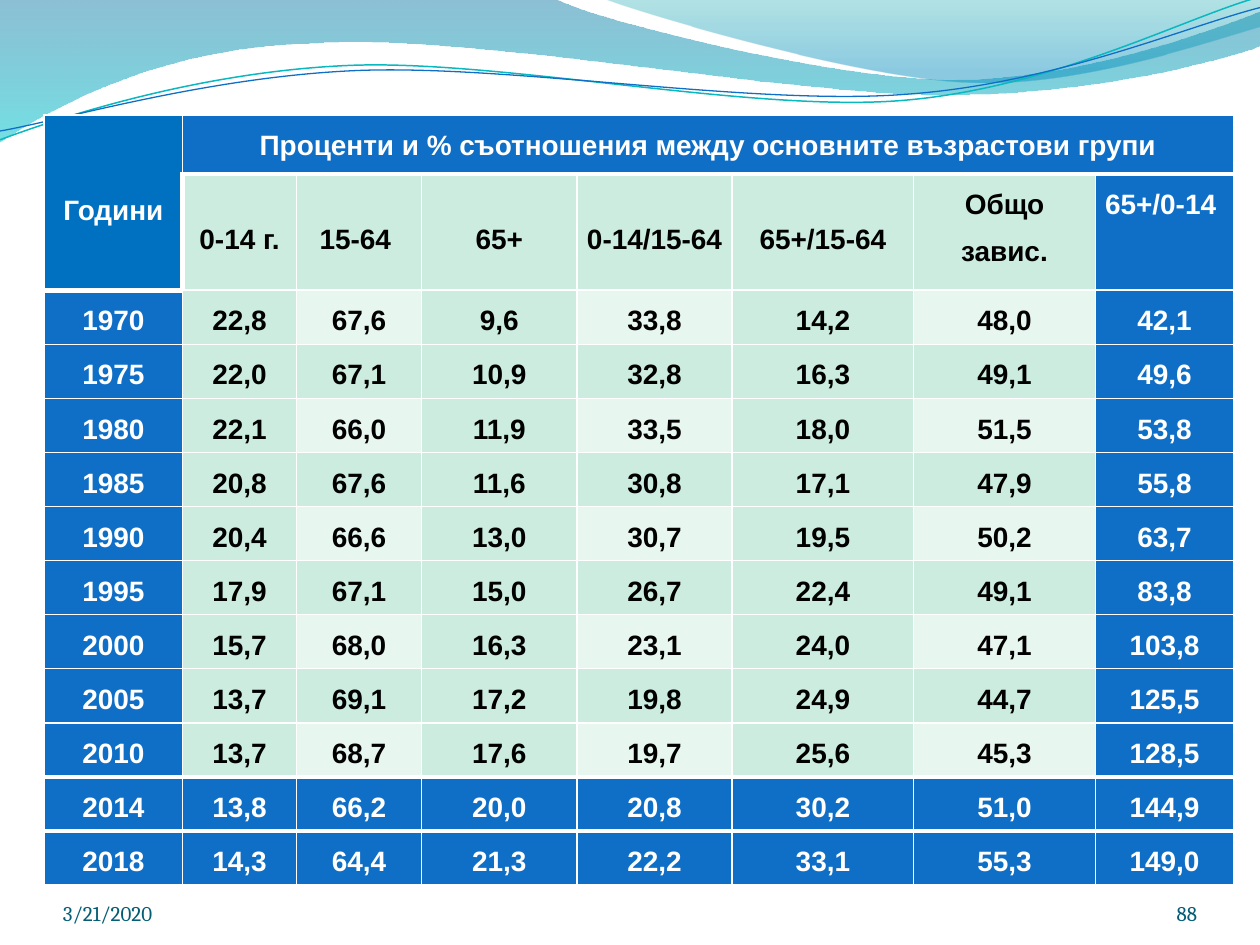
"""Build a slide with a table of age group percentages under a wave banner."""
from math import cos, radians, sin

from lxml import etree
from pptx import Presentation
from pptx.dml.color import RGBColor
from pptx.enum.text import MSO_ANCHOR, PP_ALIGN
from pptx.oxml.ns import qn
from pptx.util import Cm, Pt

TOP, MIDDLE, BOTTOM = MSO_ANCHOR.TOP, MSO_ANCHOR.MIDDLE, MSO_ANCHOR.BOTTOM
LEFT, CENTER, RIGHT = PP_ALIGN.LEFT, PP_ALIGN.CENTER, PP_ALIGN.RIGHT
INCH = 2.54

COLORS = {
    "white": "FFFFFF", "black": "000000", "blue": "0F6FC6", "corner": "0070C0",
    "band": "CBECDE", "light": "E7F6EF", "footer": "045D75", "teal": "0AB8BF",
    "deep": "0074A1", "aqua": "00C6CF", "sea": "00A1A9", "sky": "008BBF",
}

TITLE = "Проценти и % съотношения между основните възрастови групи"
CORNER = "Години"
HEADERS = ["0-14 г.", "15-64 ", "65+", "0-14/15-64", "65+/15-64", "Общо завис.", "65+/0-14 "]
YEARS = [
    ("1970", "22,8", "67,6", "9,6", "33,8", "14,2", "48,0", "42,1"),
    ("1975", "22,0", "67,1", "10,9", "32,8", "16,3", "49,1", "49,6"),
    ("1980", "22,1", "66,0", "11,9", "33,5", "18,0", "51,5", "53,8"),
    ("1985", "20,8", "67,6", "11,6", "30,8", "17,1", "47,9", "55,8"),
    ("1990", "20,4", "66,6", "13,0", "30,7", "19,5", "50,2", "63,7"),
    ("1995", "17,9", "67,1", "15,0", "26,7", "22,4", "49,1", "83,8"),
    ("2000", "15,7", "68,0", "16,3", "23,1", "24,0", "47,1", "103,8"),
    ("2005", "13,7", "69,1", "17,2", "19,8", "24,9", "44,7", "125,5"),
    ("2010", "13,7", "68,7", "17,6", "19,7", "25,6", "45,3", "128,5"),
    ("2014", "13,8", "66,2", "20,0", "20,8", "30,2", "51,0", "144,9"),
    ("2018", "14,3", "64,4", "21,3", "22,2", "33,1", "55,3", "149,0"),
]
ROWS = [[CORNER, TITLE] + [""] * 6, [""] + HEADERS] + YEARS
TABLE_LEFT, TABLE_TOP = 0.89, 2.32
COLUMN_WIDTHS = [2.79, 2.3, 2.52, 3.13, 3.13, 3.66, 3.66, 2.79]
ROW_HEIGHTS = [1.19, 2.34] + [1.09] * len(YEARS)
LAST_COLUMN = len(COLUMN_WIDTHS) - 1
TOTAL_ROWS = (11, 12)

WAVES = [
    {"box": (-0.01, -0.01, 10.02, 1.14), "stops": [("deep", 45, 0), ("aqua", 55, 1)],
     "start": (0, 0), "segments": [
        [(4.4, -0.01)],
        [(4.76, 0.17), (6.64, 0.63), (7.58, 0.63)],
        [(8.53, 0.63), (9.58, 0.26), (10, 0.09)],
        [(10.01, 0.36)],
        [(9.83, 0.44), (8.7, 0.76), (7.46, 0.75)],
        [(6.22, 0.75), (3.82, 0.28), (2.57, 0.34)],
        [(1.29, 0.36), (0.46, 0.83), (-0.01, 1.13)],
        [(0, 0)]]},
    {"box": (4.79, -0.01, 5.21, 0.7), "stops": [("sea", 30, 0), ("sky", 45, 0.8)],
     "start": (4.79, -0.01), "segments": [
        [(5.09, 0.11), (6.82, 0.62), (7.69, 0.65)],
        [(8.56, 0.69), (9.61, 0.32), (10, 0.21)],
        [(10, 0)],
        [(4.79, -0.01)]]},
]
STROKES = [
    {"box": (-0.02, 0.22, 10.02, 0.71), "color": "teal", "width": 0.85,
     "start": (0, 1.11), "segments": [
        [(0.48, 0.93), (1.58, 0.57), (2.77, 0.52)],
        [(3.95, 0.47), (5.93, 0.89), (7.13, 0.8)],
        [(8.33, 0.71), (9.38, 0.15), (9.98, -0.02)]]},
    {"box": (-0.02, 0.3, 10.03, 0.58), "color": "blue", "width": 0.75,
     "start": (0, 1.04), "segments": [
        [(0.47, 0.96), (1.64, 0.61), (2.83, 0.56)],
        [(4.03, 0.51), (5.97, 0.84), (7.17, 0.75)],
        [(8.36, 0.67), (9.41, 0.21), (10, 0.06)]]},
]
STROKE_ROTATION = 357.3
FOOTERS = [("3/21/2020", 0.5, 2.33, LEFT), ("88", 8.67, 0.83, RIGHT)]


def length(inches):
    return Cm(inches * INCH)


def color(name):
    return RGBColor.from_string(COLORS[name])


def apply(target, formats):
    for name, value in formats.items():
        setattr(target, name, value)


def write(frame, text, alignment, spacing, font_name, size, bold, color_name):
    paragraph = frame.paragraphs[0]
    apply(paragraph, {"alignment": alignment, "line_spacing": spacing})
    run = paragraph.add_run()
    run.text = text
    apply(run.font, {"name": font_name, "size": Pt(size), "bold": bold})
    run.font.color.rgb = color(color_name)


def local_point(point, box, rotation):
    left, top, width, height = box
    angle = radians(-rotation)
    x, y = point[0] - left - width / 2, point[1] - top - height / 2
    return (length(width / 2 + x * cos(angle) - y * sin(angle)),
            length(height / 2 + x * sin(angle) + y * cos(angle)))


def add_outline(slide, outline, closed, rotation=0):
    box = outline["box"]
    left, top, width, height = map(length, box)
    builder = slide.shapes.build_freeform(0, 0)
    builder.add_line_segments([(width, height)], close=closed)
    shape = builder.convert_to_shape()
    shape.shadow.inherit = False
    apply(shape, {"left": left, "top": top, "width": width, "height": height,
                  "rotation": rotation})
    curve = next(shape._element.spPr.iter(qn("a:path")))
    curve.set("w", str(width))
    curve.set("h", str(height))
    for element in list(curve):
        curve.remove(element)
    commands = [("moveTo", [outline["start"]])]
    commands += [("lnTo" if len(points) == 1 else "cubicBezTo", points)
                 for points in outline["segments"]]
    commands += [("close", [])] if closed else []
    for tag, points in commands:
        command = etree.SubElement(curve, qn(f"a:{tag}"))
        for point in points:
            x, y = local_point(point, box, rotation)
            etree.SubElement(command, qn("a:pt"), x=str(x), y=str(y))
    return shape


def add_wave(slide, wave):
    shape = add_outline(slide, wave, True)
    shape.line.fill.background()
    shape.fill.gradient()
    shape.fill.gradient_angle = 270
    for stop, (name, _, position) in zip(shape.fill.gradient_stops, wave["stops"]):
        stop.color.rgb = color(name)
        stop.position = position
    for element, (_, opacity, _) in zip(shape._element.spPr.iter(qn("a:srgbClr")), wave["stops"]):
        etree.SubElement(element, qn("a:alpha"), val=str(opacity * 1000))


def add_stroke(slide, stroke):
    shape = add_outline(slide, stroke, False, STROKE_ROTATION)
    shape.fill.background()
    shape.line.color.rgb = color(stroke["color"])
    shape.line.width = Pt(stroke["width"])


def fill_name(row, column):
    if (row, column) == (0, 0):
        return "corner"
    if row == 0 or row in TOTAL_ROWS or column in (0, LAST_COLUMN):
        return "blue"
    return "light" if row % 2 == 0 and column % 2 == 0 else "band"


def thick_below(row, column):
    return row in (0, 10, 11) or (row, column) == (1, 0)


def add_borders(cell, row, column):
    thick = {"L": (row, column) == (1, 1), "R": False,
             "T": thick_below(row - 1, column), "B": thick_below(row, column)}
    properties = cell._tc.get_or_add_tcPr()
    for side, is_thick in thick.items():
        line = etree.SubElement(properties, qn(f"a:ln{side}"), w=str(Pt(3 if is_thick else 1)))
        solid = etree.SubElement(line, qn("a:solidFill"))
        etree.SubElement(solid, qn("a:srgbClr"), val=COLORS["white"])


def add_age_table(slide):
    table = slide.shapes.add_table(
        len(ROWS), len(COLUMN_WIDTHS), Cm(TABLE_LEFT), Cm(TABLE_TOP),
        Cm(sum(COLUMN_WIDTHS)), Cm(sum(ROW_HEIGHTS))).table
    apply(table, {"first_row": False, "horz_banding": False})
    for column, width in zip(table.columns, COLUMN_WIDTHS):
        column.width = Cm(width)
    for row, height in zip(table.rows, ROW_HEIGHTS):
        row.height = Cm(height)
    table.cell(0, 0).merge(table.cell(1, 0))
    table.cell(0, 1).merge(table.cell(0, LAST_COLUMN))
    for row, texts in enumerate(ROWS):
        for column, text in enumerate(texts):
            cell = table.cell(row, column)
            if cell.is_spanned:
                continue
            add_borders(cell, row, column)
            fill = fill_name(row, column)
            cell.fill.solid()
            cell.fill.fore_color.rgb = color(fill)
            centered = (row, column) == (0, 0) or (row == 1 and column <= 5)
            apply(cell, {"margin_left": length(0.07), "margin_right": length(0.07),
                         "margin_top": 0, "margin_bottom": 0,
                         "vertical_anchor": MIDDLE if centered else TOP})
            text_color = "white" if fill in ("blue", "corner") else "black"
            write(cell.text_frame, text, CENTER, 1.5, "Arial", 16, True, text_color)


def add_footer(slide, text, left, width, alignment):
    frame = slide.shapes.add_textbox(
        length(left), length(6.95), length(width), length(0.4)).text_frame
    apply(frame, {"word_wrap": True, "vertical_anchor": BOTTOM, "margin_left": 0,
                  "margin_right": 0, "margin_top": 0, "margin_bottom": 0})
    write(frame, text, alignment, 1.0, "Cambria", 12, False, "footer")


presentation = Presentation()
apply(presentation, {"slide_width": length(10), "slide_height": length(7.5)})
slide = presentation.slides.add_slide(presentation.slide_layouts[6])
for wave in WAVES:
    add_wave(slide, wave)
for stroke in STROKES:
    add_stroke(slide, stroke)
add_age_table(slide)
for footer in FOOTERS:
    add_footer(slide, *footer)
presentation.save("out.pptx")
